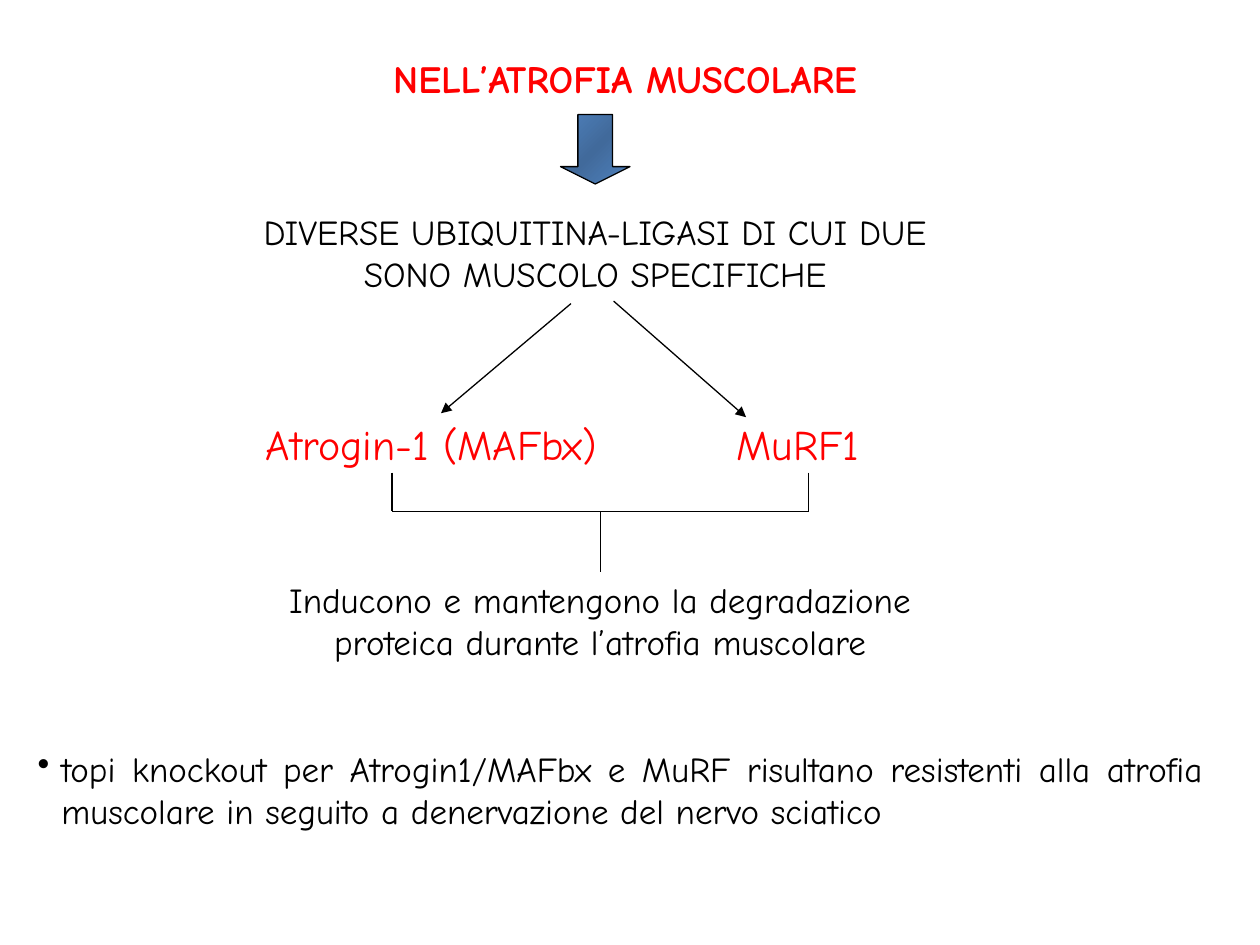
"""Build a slide on the ubiquitin ligases involved in muscle atrophy."""
from copy import deepcopy

from lxml import etree
from pptx import Presentation
from pptx.dml.color import RGBColor
from pptx.enum.shapes import MSO_CONNECTOR, MSO_SHAPE
from pptx.enum.text import MSO_ANCHOR, PP_ALIGN
from pptx.oxml.ns import qn
from pptx.util import Cm, Pt

STRAIGHT = MSO_CONNECTOR.STRAIGHT
DOWN_ARROW = MSO_SHAPE.DOWN_ARROW
MIDDLE = MSO_ANCHOR.MIDDLE
CENTER, JUSTIFY = PP_ALIGN.CENTER, PP_ALIGN.JUSTIFY

FONT = "Comic Neue"
RED, BLACK = "FF0000", "000000"

TITLE = ("NELL’ATROFIA MUSCOLARE", (4.5, 0.13, 14.2, 2.16), 22, RED)
STATEMENTS = [
    ("DIVERSE UBIQUITINA-LIGASI DI CUI DUE SONO MUSCOLO SPECIFICHE",
     (4.7, 4.11, 14.6, 1.96), 20, BLACK),
    ("Atrogin-1 (MAFbx)", (4.7, 8.31, 8, 1.3), 24, RED),
    ("MuRF1", (13.9, 8.31, 4.37, 1.3), 24, RED),
    ("Inducono e mantengono la degradazione proteica durante l’atrofia muscolare",
     (4.9, 11.53, 14.4, 1.96), 20, BLACK),
]
EVIDENCE = ("topi knockout per Atrogin1/MAFbx e MuRF risultano resistenti alla "
            "atrofia muscolare in seguito a denervazione del nervo sciatico",
            (0.51, 14.94, 24, 1.96), 20, BLACK)
BULLET_INDENT = Cm(0.48)

DOWN_ARROW_BOX = (11.3, 2.31, 1.4, 1.4)
GRADIENT = [(0, "4F81BD"), (0.5, "416A9B"), (1, "4F81BD")]

BRANCHES = [((11.51, 6.12), (8.89, 8.33)), ((12.37, 6.07), (15.04, 8.41))]
LEFT, STEM, RIGHT = 7.9, 12.1, 16.3
TOP, BAR, BOTTOM = 9.53, 10.31, 11.53
BRACKET = [
    ((LEFT, TOP), (LEFT, BAR)),
    ((RIGHT, TOP), (RIGHT, BAR)),
    ((LEFT, BAR), (RIGHT, BAR)),
    ((STEM, BAR), (STEM, BOTTOM)),
]


def color(value):
    return RGBColor.from_string(value)


def add_text(slide, text, box, size, ink, align=CENTER, bullet=False, bold=False):
    frame = slide.shapes.add_textbox(*map(Cm, box)).text_frame
    frame.word_wrap = True
    paragraph = frame.paragraphs[0]
    paragraph.text = text
    paragraph.alignment = align
    if bullet:
        properties = paragraph._p.get_or_add_pPr()
        properties.set("marL", str(BULLET_INDENT))
        properties.set("indent", str(-BULLET_INDENT))
        etree.SubElement(properties, qn("a:buChar"), char="•")
    font = paragraph.font
    font.name, font.size, font.bold = FONT, Pt(size), bold
    font.color.rgb = color(ink)
    return frame


def add_line(slide, start, end, arrow=False):
    line = slide.shapes.add_connector(STRAIGHT, *map(Cm, start + end))
    line.line.color.rgb = color(BLACK)
    line.line.width = Pt(0.75)
    if arrow:
        etree.SubElement(line.line._get_or_add_ln(), qn("a:tailEnd"), type="triangle")
    etree.SubElement(line._element.spPr, qn("a:effectLst"))


def add_down_arrow(slide):
    arrow = slide.shapes.add_shape(DOWN_ARROW, *map(Cm, DOWN_ARROW_BOX))
    arrow.shadow.inherit = False
    arrow.adjustments[0], arrow.adjustments[1] = 0.5, 0.25
    arrow.line.color.rgb = color(BLACK)
    arrow.line.width = Pt(0.75)
    arrow.fill.gradient()
    arrow.fill.gradient_angle = 315
    stop_list = arrow._element.spPr.find(".//" + qn("a:gsLst"))
    stop_list.append(deepcopy(stop_list[0]))
    for stop, (position, shade) in zip(arrow.fill.gradient_stops, GRADIENT):
        stop.position = position
        stop.color.rgb = color(shade)


def main():
    deck = Presentation()
    deck.slide_width, deck.slide_height = Cm(25.4), Cm(19.05)
    slide = deck.slides.add_slide(deck.slide_layouts[6])
    title = add_text(slide, *TITLE, bold=True)
    title.vertical_anchor = MIDDLE
    title.margin_left, title.margin_top = Cm(2.25), Cm(0.85)
    add_down_arrow(slide)
    for statement in STATEMENTS:
        add_text(slide, *statement)
    for start, end in BRANCHES:
        add_line(slide, start, end, arrow=True)
    for start, end in BRACKET:
        add_line(slide, start, end)
    add_text(slide, *EVIDENCE, align=JUSTIFY, bullet=True)
    deck.save("out.pptx")


if __name__ == "__main__":
    main()
